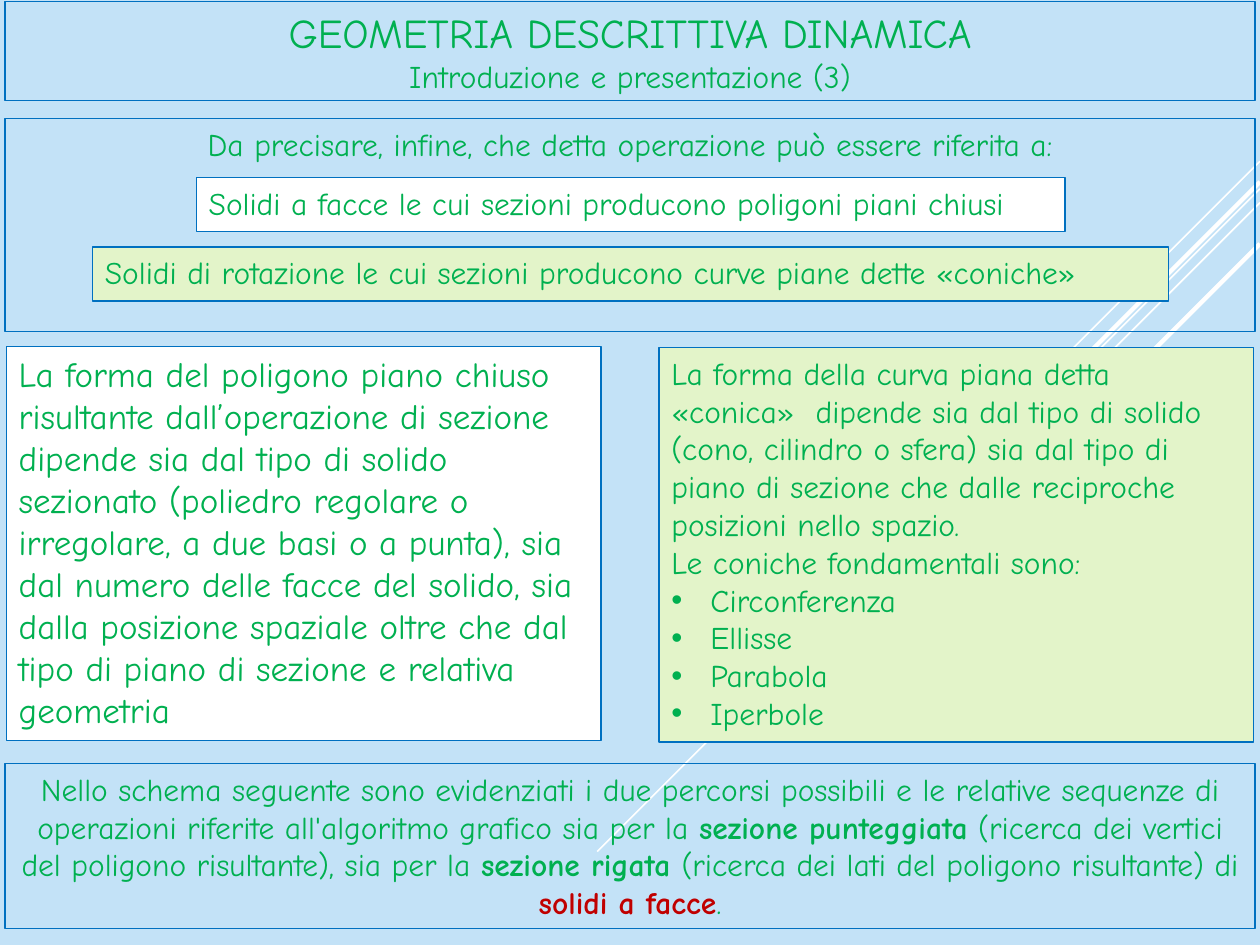
import pptx
import pptx.util
import pptx.dml.color
import pptx.enum.shapes
import pptx.enum.text
import pptx.oxml.ns
import lxml.etree

COLOURS = {
    "background": "C3E2F7",
    "text": "00B050",
    "border": "0070C0",
    "white": "FFFFFF",
    "green": "E3F4C9",
    "accent": "C00000",
}
FONT = "Comic Neue"
COLUMNS, ROWS = 100, 75
WIDTH, HEIGHT = pptx.util.Inches(10), pptx.util.Inches(7.5)
LEFT = pptx.enum.text.PP_ALIGN.LEFT
CENTER = pptx.enum.text.PP_ALIGN.CENTER


def colour(name):
    """Return the named colour."""
    return pptx.dml.color.RGBColor.from_string(COLOURS[name])


def grid_x(columns):
    """Turn grid columns into a length."""
    return round(columns * WIDTH / COLUMNS)


def grid_y(rows):
    """Turn grid rows into a length."""
    return round(rows * HEIGHT / ROWS)


def inner_box(box, left, top, width, height):
    """Return a box given as shares of another box."""
    return (box[0] + left * box[2], box[1] + top * box[3], width * box[2], height * box[3])


def add_panel(slide, box, fill=None):
    """Add a bordered rectangle and return its text frame."""
    left, top, width, height = box
    shape = slide.shapes.add_shape(
        pptx.enum.shapes.MSO_SHAPE.RECTANGLE,
        grid_x(left), grid_y(top), grid_x(width), grid_y(height))
    shape.shadow.inherit = False
    if fill:
        shape.fill.solid()
        shape.fill.fore_color.rgb = colour(fill)
    else:
        shape.fill.background()
    shape.line.color.rgb = colour("border")
    shape.line.width = pptx.util.Pt(0.75)
    frame = shape.text_frame
    frame.word_wrap = True
    frame.vertical_anchor = pptx.enum.text.MSO_ANCHOR.TOP
    return frame


def style_paragraph(paragraph, size=18, alignment=LEFT):
    """Set the font and alignment of a paragraph."""
    paragraph.alignment = alignment
    paragraph.font.name = FONT
    paragraph.font.size = pptx.util.Pt(size)
    paragraph.font.color.rgb = colour("text")


def add_bullet(paragraph):
    """Give a paragraph a hanging bullet."""
    properties = paragraph._p.get_or_add_pPr()
    indent = pptx.util.Inches(0.31)
    properties.set("marL", str(indent))
    properties.set("indent", str(-indent))
    font = lxml.etree.Element(pptx.oxml.ns.qn("a:buFont"), typeface="Arial")
    bullet = lxml.etree.Element(pptx.oxml.ns.qn("a:buChar"), char="•")
    defaults = properties.find(pptx.oxml.ns.qn("a:defRPr"))
    defaults.addprevious(font)
    defaults.addprevious(bullet)


def add_text_panel(slide, box, text, fill=None, size=18, alignment=LEFT):
    """Add a panel holding one plain paragraph and return its text frame."""
    frame = add_panel(slide, box, fill)
    paragraph = frame.paragraphs[0]
    paragraph.text = text
    style_paragraph(paragraph, size, alignment)
    return frame


def add_rays(slide, box):
    """Add the white diagonal lines, each running down and left from the right edge."""
    left, top, width, height = box
    rays = [
        (1, 0, 0.65, 1), (1, 0.04, 1, 1), (1, 0.06, 0.81, 1),
        (1, 0.03, 0.8, 2.5), (1, 0.12, 0.71, 2.5),
    ]
    for start, drop, length, weight in rays:
        start_x = grid_x(left + start * width)
        start_y = grid_y(top + drop * height)
        run = grid_x(length * width)
        line = slide.shapes.add_connector(
            pptx.enum.shapes.MSO_CONNECTOR.STRAIGHT,
            start_x, start_y, start_x - run, start_y + run)
        line.line.color.rgb = colour("white")
        line.line.width = pptx.util.Pt(weight)
        lxml.etree.SubElement(line._element.spPr, pptx.oxml.ns.qn("a:effectLst"))


def add_heading(slide, box):
    """Add the title with its subtitle line."""
    frame = add_panel(slide, box)
    frame.vertical_anchor = pptx.enum.text.MSO_ANCHOR.BOTTOM
    paragraph = frame.paragraphs[0]
    style_paragraph(paragraph, alignment=CENTER)
    title = paragraph.add_run()
    title.text = "GEOMETRIA DESCRITTIVA DINAMICA"
    title.font.size = pptx.util.Pt(23.4)
    paragraph.add_line_break()
    paragraph.add_run().text = "Introduzione e presentazione (3)"


def add_introduction(slide, box):
    """Add the opening statement and the two kinds of solid."""
    add_text_panel(
        slide, box, "Da precisare, infine, che detta operazione può essere riferita a:",
        alignment=CENTER)
    add_text_panel(
        slide, inner_box(box, 0.153, 0.278, 0.695, 0.254),
        "Solidi a facce le cui sezioni producono poligoni piani chiusi", "white")
    add_text_panel(
        slide, inner_box(box, 0.07, 0.604, 0.861, 0.254),
        "Solidi di rotazione le cui sezioni producono curve piane dette «coniche»", "green")


def add_polygons(slide, box):
    """Add the text about plane polygons."""
    add_text_panel(
        slide, box,
        "La forma del poligono piano chiuso risultante dall’operazione di sezione dipende "
        "sia dal tipo di solido sezionato (poliedro regolare o irregolare, a due basi o a "
        "punta), sia dal numero delle facce del solido, sia dalla posizione spaziale oltre "
        "che dal tipo di piano di sezione e relativa geometria",
        "white", size=20)


def add_conics(slide, box):
    """Add the text about conics and the list of them."""
    frame = add_text_panel(
        slide, box,
        "La forma della curva piana detta «conica»  dipende sia dal tipo di solido (cono, "
        "cilindro o sfera) sia dal tipo di piano di sezione che dalle reciproche posizioni "
        "nello spazio.", "green")
    conics = ["Circonferenza", "Ellisse", "Parabola", "Iperbole"]
    for text in ["Le coniche fondamentali sono:"] + conics:
        paragraph = frame.add_paragraph()
        paragraph.text = text
        style_paragraph(paragraph)
        if text in conics:
            add_bullet(paragraph)


def add_conclusion(slide, box):
    """Add the closing paragraph with its emphasised terms."""
    paragraph = add_panel(slide, box).paragraphs[0]
    style_paragraph(paragraph, alignment=CENTER)
    pieces = [
        ("Nello schema seguente sono evidenziati i due percorsi possibili e le relative "
         "sequenze di operazioni riferite all'algoritmo grafico sia per la ", False, "text"),
        ("sezione punteggiata", True, "text"),
        (" (ricerca dei vertici del poligono risultante), sia per la ", False, "text"),
        ("sezione rigata ", True, "text"),
        ("(ricerca dei lati del poligono risultante) di ", False, "text"),
        ("solidi a facce", True, "accent"),
        (".", False, "text"),
    ]
    for text, bold, name in pieces:
        run = paragraph.add_run()
        run.text = text
        run.font.bold = bold
        run.font.color.rgb = colour(name)


def main():
    """Build the slide and save it."""
    presentation = pptx.Presentation()
    presentation.slide_width, presentation.slide_height = WIDTH, HEIGHT
    slide = presentation.slides.add_slide(presentation.slide_layouts[6])
    slide.background.fill.solid()
    slide.background.fill.fore_color.rgb = colour("background")
    add_rays(slide, (47.4, 12.8, 52.6, 54.6))
    add_heading(slide, (0.4, 0.1, 99.2, 7.9))
    add_conclusion(slide, (0.4, 60.6, 99.2, 13.1))
    add_polygons(slide, (0.5, 27.5, 47.2, 31.3))
    add_conics(slide, (52.3, 27.6, 47.2, 31.3))
    add_introduction(slide, (0.4, 9.4, 99.2, 16.9))
    presentation.save("out.pptx")


if __name__ == "__main__":
    main()
